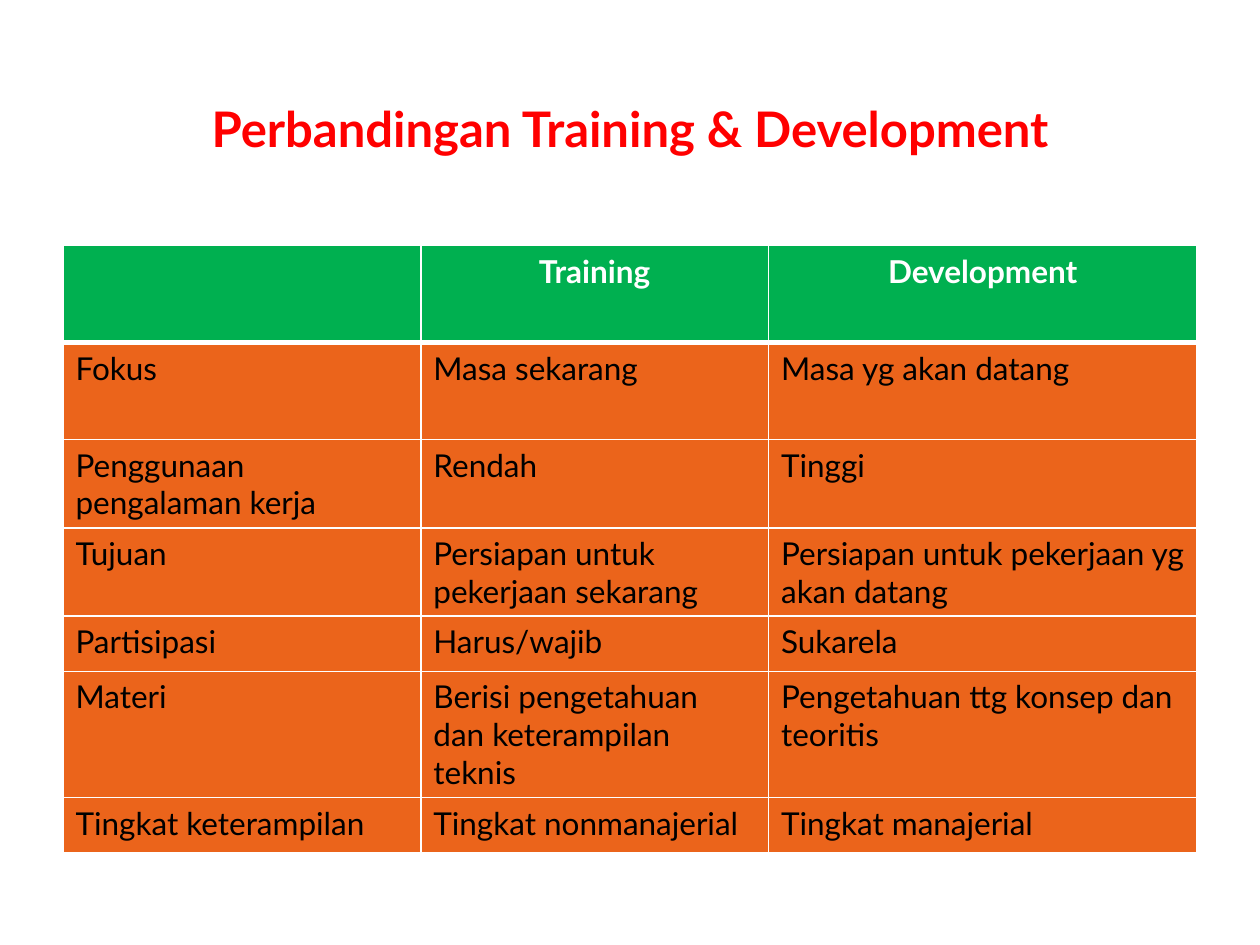
from pptx import Presentation
from pptx.dml.color import RGBColor
from pptx.enum.text import MSO_ANCHOR, PP_ALIGN
from pptx.oxml import parse_xml
from pptx.oxml.ns import nsdecls
from pptx.util import Inches, Pt

FONT = "Lato"
RED = RGBColor(0xFF, 0x00, 0x00)
GREEN = RGBColor(0x00, 0xB0, 0x50)
ORANGE = RGBColor(0xEB, 0x64, 0x1B)
WHITE = RGBColor(0xFF, 0xFF, 0xFF)
BLACK = RGBColor(0x00, 0x00, 0x00)

TITLE = "Perbandingan Training & Development"
ROWS = [
    ("", "Training", "Development"),
    ("Fokus", "Masa sekarang", "Masa yg akan datang"),
    ("Penggunaan pengalaman kerja", "Rendah", "Tinggi"),
    ("Tujuan", "Persiapan untuk pekerjaan sekarang",
     "Persiapan untuk pekerjaan yg akan datang"),
    ("Partisipasi", "Harus/wajib", "Sukarela"),
    ("Materi", "Berisi pengetahuan dan keterampilan teknis",
     "Pengetahuan ttg konsep dan teoritis"),
    ("Tingkat keterampilan", "Tingkat nonmanajerial", "Tingkat manajerial"),
]
COL_WIDTHS = [2.84, 2.76, 3.4]
ROW_HEIGHTS = [0.77, 0.77, 0.58, 0.67, 0.44, 0.44, 0.44]


def style_font(font, size, color, bold):
    font.name = FONT
    font.size = Pt(size)
    font.bold = bold
    font.color.rgb = color


def set_borders(cell, top, bottom):
    tc_pr = cell._tc.get_or_add_tcPr()
    widths = {"L": 1, "R": 1, "T": top, "B": bottom}
    for i, (side, width) in enumerate(widths.items()):
        tc_pr.insert(i, parse_xml(
            f'<a:ln{side} {nsdecls("a")} w="{Pt(width)}"><a:solidFill>'
            f'<a:srgbClr val="{WHITE}"/></a:solidFill></a:ln{side}>'))


prs = Presentation()
prs.slide_width, prs.slide_height = Inches(10), Inches(7.5)
s = prs.slides.add_slide(prs.slide_layouts[6])

frame = s.shapes.add_table(len(ROWS), len(COL_WIDTHS), Inches(0.5), Inches(1.95),
                           Inches(9), Inches(4.51))
table = frame.table
for column, width in zip(table.columns, COL_WIDTHS):
    column.width = Inches(width)
for row, height in zip(table.rows, ROW_HEIGHTS):
    row.height = Inches(height)

for r, texts in enumerate(ROWS):
    header = r == 0
    for c, label in enumerate(texts):
        cell = table.cell(r, c)
        cell.fill.solid()
        cell.fill.fore_color.rgb = GREEN if header else ORANGE
        set_borders(cell, 3 if r == 1 else 1, 3 if header else 1)
        p = cell.text_frame.paragraphs[0]
        p.text = label
        p.alignment = PP_ALIGN.CENTER if header else PP_ALIGN.LEFT
        for run in p.runs:
            style_font(run.font, 18, WHITE if header else BLACK, header)

title = s.shapes.add_textbox(Inches(0.5), Inches(0.7), Inches(9), Inches(0.63))
tf = title.text_frame
tf.word_wrap = True
tf.vertical_anchor = MSO_ANCHOR.MIDDLE
tf.text = TITLE
p = tf.paragraphs[0]
p.alignment = PP_ALIGN.CENTER
style_font(p.runs[0].font, 28, RED, True)

prs.save("out.pptx")
